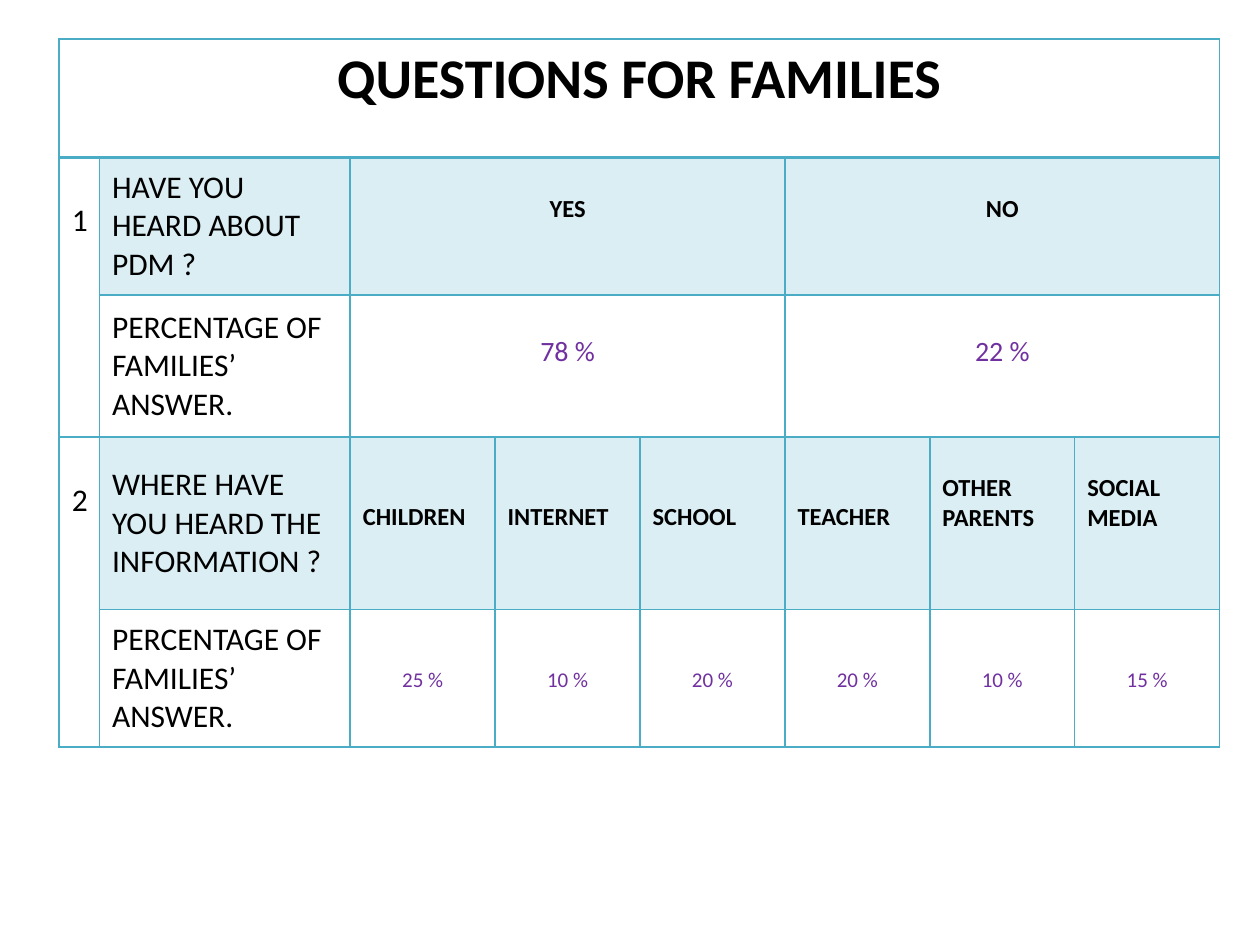
from dataclasses import dataclass

from lxml.etree import SubElement
from pptx import Presentation
from pptx.dml.color import RGBColor
from pptx.enum.text import MSO_ANCHOR, PP_ALIGN
from pptx.oxml.ns import qn
from pptx.table import Table, _Cell
from pptx.util import Inches, Pt

COLORS = {"text": "000000", "teal": "4BACC6", "answer": "7030A0"}
COLUMN_WIDTHS = [0.32, 1.99] + [1.15] * 6
ROW_HEIGHTS = [0.94, 1.09, 1.13, 1.37, 1.09]
CELL_MARGIN = 0.05
LINE_SPACING = 1.22
TINT_PERCENT = 20


@dataclass
class Style:
    size: int
    bold: bool = False
    color: str = "text"
    align: PP_ALIGN = PP_ALIGN.LEFT
    anchor: MSO_ANCHOR = MSO_ANCHOR.TOP
    tinted: bool = False


@dataclass
class Entry:
    row: int
    column: int
    text: str
    style: Style
    row_span: int = 1
    column_span: int = 1
    lines_above: int = 0


TITLE = Style(32, bold=True, align=PP_ALIGN.CENTER)
NUMBER = Style(18)
QUESTION = Style(18, anchor=MSO_ANCHOR.MIDDLE, tinted=True)
RESULT = Style(18, anchor=MSO_ANCHOR.MIDDLE)
CHOICE = Style(14, bold=True, align=PP_ALIGN.CENTER, tinted=True)
SOURCE = Style(14, bold=True, tinted=True)
CHOICE_SHARE = Style(16, color="answer", align=PP_ALIGN.CENTER)
SOURCE_SHARE = Style(12, color="answer", align=PP_ALIGN.CENTER)

QUESTIONS = ["HAVE YOU HEARD ABOUT PDM ?", "WHERE HAVE YOU HEARD THE INFORMATION ?"]
CHOICES = [("YES", "78 %"), ("NO", "22 %")]
SOURCES = [
    ("CHILDREN", "25 %", 2),
    ("INTERNET", "10 %", 2),
    ("SCHOOL", "20 %", 2),
    ("TEACHER", "20 %", 2),
    ("OTHER PARENTS", "10 %", 1),
    ("SOCIAL MEDIA", "15 %", 1),
]


def survey_entries() -> list[Entry]:
    entries = [Entry(0, 0, "QUESTIONS FOR FAMILIES", TITLE, column_span=8)]
    for index, question in enumerate(QUESTIONS):
        row = 1 + 2 * index
        entries += [
            Entry(row, 0, str(index + 1), NUMBER, row_span=2, lines_above=1),
            Entry(row, 1, question, QUESTION),
            Entry(row + 1, 1, "PERCENTAGE OF FAMILIES’ ANSWER.", RESULT),
        ]
    for index, (choice, share) in enumerate(CHOICES):
        column = 2 + 3 * index
        entries += [
            Entry(1, column, choice, CHOICE, column_span=3, lines_above=1),
            Entry(2, column, share, CHOICE_SHARE, column_span=3, lines_above=1),
        ]
    for column, (source, share, lines_above) in enumerate(SOURCES, start=2):
        entries += [
            Entry(3, column, source, SOURCE, lines_above=lines_above),
            Entry(4, column, share, SOURCE_SHARE, lines_above=2),
        ]
    return entries


def set_borders(cell: _Cell, widths: dict[str, float]) -> None:
    properties = cell._tc.get_or_add_tcPr()
    for side, width in widths.items():
        line = SubElement(properties, qn(f"a:ln{side}"), w=str(Pt(width)))
        fill = SubElement(line, qn("a:solidFill"))
        SubElement(fill, qn("a:srgbClr"), val=COLORS["teal"])


def tint(cell: _Cell) -> None:
    cell.fill.solid()
    cell.fill.fore_color.rgb = RGBColor.from_string(COLORS["teal"])
    color = cell._tc.tcPr.find(f"{qn('a:solidFill')}/{qn('a:srgbClr')}")
    SubElement(color, qn("a:alpha"), val=str(TINT_PERCENT * 1000))


def prepare_cells(table: Table) -> None:
    for row_index, row in enumerate(table.rows):
        for cell in row.cells:
            set_borders(cell, {
                "L": 1,
                "R": 1,
                "T": 2 if row_index == 1 else 1,
                "B": 2 if row_index == 0 else 1,
            })
            cell.fill.background()


def write_entry(table: Table, entry: Entry) -> None:
    cell = table.cell(entry.row, entry.column)
    if entry.row_span > 1 or entry.column_span > 1:
        cell.merge(table.cell(entry.row + entry.row_span - 1,
                              entry.column + entry.column_span - 1))
    style = entry.style
    if style.tinted:
        tint(cell)
    offset = entry.lines_above * style.size * LINE_SPACING / 72
    cell.margin_top = Inches(round(CELL_MARGIN + offset, 2))
    cell.vertical_anchor = style.anchor
    para = cell.text_frame.paragraphs[0]
    para.alignment = style.align
    span = para.add_run()
    span.text = entry.text
    font_format = {"name": "Calibri", "size": Pt(style.size), "bold": style.bold}
    for attribute, value in font_format.items():
        setattr(span.font, attribute, value)
    span.font.color.rgb = RGBColor.from_string(COLORS[style.color])


def main() -> None:
    deck = Presentation()
    deck.slide_width, deck.slide_height = Inches(10), Inches(7.5)
    page = deck.slides.add_slide(deck.slide_layouts[6])
    table = page.shapes.add_table(
        len(ROW_HEIGHTS), len(COLUMN_WIDTHS), Inches(0.47), Inches(0.31),
        Inches(sum(COLUMN_WIDTHS)), Inches(sum(ROW_HEIGHTS)),
    ).table
    table.first_row = table.horz_banding = False
    for column, width in zip(table.columns, COLUMN_WIDTHS):
        column.width = Inches(width)
    for row, height in zip(table.rows, ROW_HEIGHTS):
        row.height = Inches(height)
    prepare_cells(table)
    for entry in survey_entries():
        write_entry(table, entry)
    deck.save("out.pptx")


if __name__ == "__main__":
    main()
